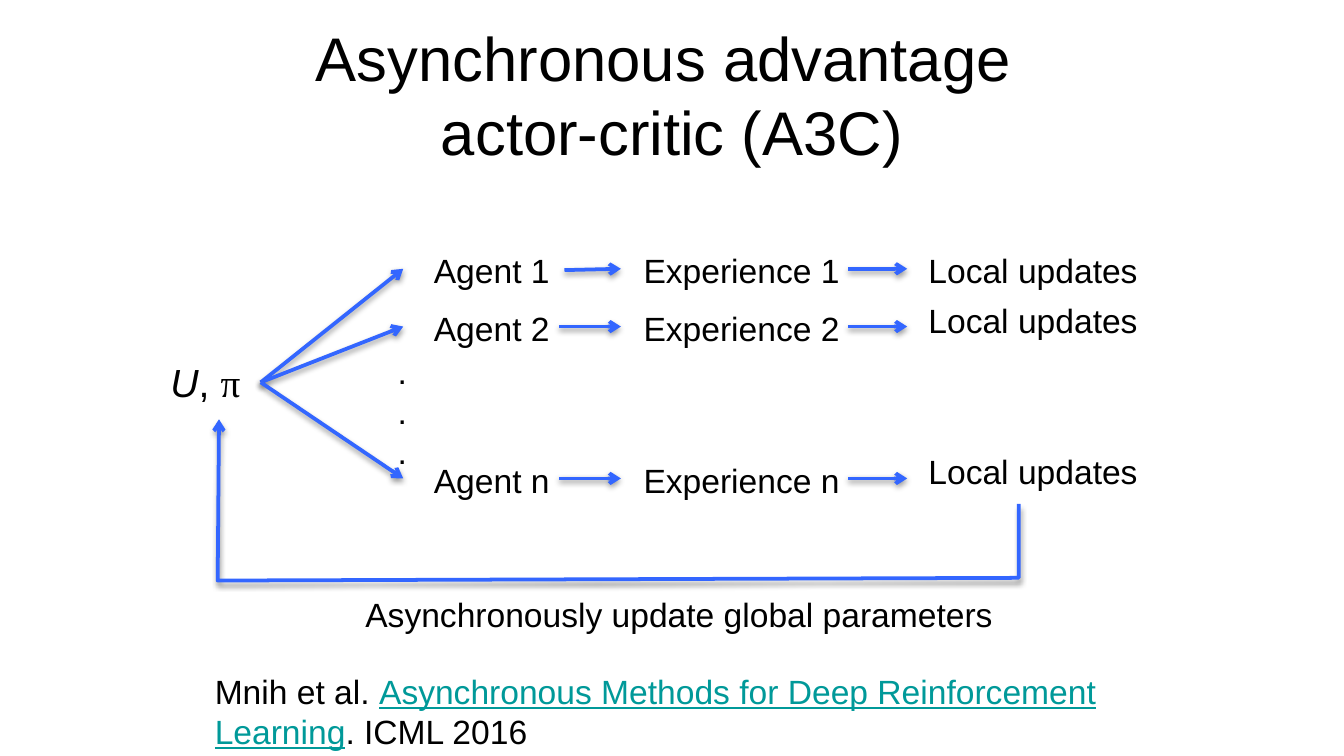
from dataclasses import dataclass

import pptx
import pptx.dml.color
import pptx.enum.shapes
import pptx.enum.text
import pptx.oxml
import pptx.oxml.ns
import pptx.util

PX = 9144  # EMU in one px, 100 px to the inch
RIGHT_SIDE = 3


@dataclass(frozen=True)
class Theme:
    font: str = "Arial"
    symbol_font: str = "Times New Roman"
    ink: str = "000000"
    flow: str = "3366FF"
    link: str = "009999"
    title: int = 33
    state: int = 21
    body: int = 18
    stroke: int = 2


@dataclass(frozen=True)
class Box:
    left: int
    top: int
    width: int
    height: int

    def inner(self, x, y, width, height):
        return Box(self.left + x, self.top + y, width, height)

    def point(self, x, y):
        return self.left + x, self.top + y

    def emu(self):
        return [n * PX for n in (self.left, self.top, self.width, self.height)]


THEME = Theme()
EFFECTS = (
    '<a:effectLst %s><a:outerShdw blurRad="40000" dist="20000" dir="5400000" rotWithShape="0">'
    '<a:srgbClr val="000000"><a:alpha val="38000"/></a:srgbClr></a:outerShdw></a:effectLst>'
    % pptx.oxml.ns.nsdecls("a")
)
ARROWHEAD = '<a:tailEnd type="arrow" %s/>' % pptx.oxml.ns.nsdecls("a")


def rgb(value):
    return pptx.dml.color.RGBColor.from_string(value)


def set_font(font, size, name=THEME.font):
    font.name = name
    font.size = pptx.util.Pt(size)
    font.color.rgb = rgb(THEME.ink)


def add_text(slide, box, *lines, size=THEME.body, wrap=False):
    """Place lines of text; each line is a list of run strings."""
    label = slide.shapes.add_textbox(*box.emu())
    frame = label.text_frame
    frame.word_wrap = wrap
    frame.auto_size = pptx.enum.text.MSO_AUTO_SIZE.SHAPE_TO_FIT_TEXT
    for index, runs in enumerate(lines):
        paragraph = frame.add_paragraph() if index else frame.paragraphs[0]
        set_font(paragraph.font, size)
        for words in runs:
            paragraph.add_run().text = words
    return label


def style_flow(flow):
    """Blue stroke, arrowhead at the end and a soft shadow below."""
    flow.line.color.rgb = rgb(THEME.flow)
    flow.line.width = pptx.util.Pt(THEME.stroke)
    properties = flow._element.spPr
    stroke = properties.find(pptx.oxml.ns.qn("a:ln"))
    stroke.append(pptx.oxml.parse_xml(ARROWHEAD))
    stroke.addnext(pptx.oxml.parse_xml(EFFECTS))


def add_arrow(slide, start, end, source=None):
    arrow = slide.shapes.add_connector(
        pptx.enum.shapes.MSO_CONNECTOR.STRAIGHT, *[n * PX for n in (*start, *end)]
    )
    if source is not None:
        arrow.begin_connect(source, RIGHT_SIDE)
    style_flow(arrow)


def add_title(slide, box):
    title = slide.shapes.title
    title.left, title.top, title.width, title.height = box.emu()
    frame = title.text_frame
    frame.text = "Asynchronous advantage \vactor-critic (A3C)"
    frame.auto_size = pptx.enum.text.MSO_AUTO_SIZE.NONE
    frame.vertical_anchor = pptx.enum.text.MSO_ANCHOR.MIDDLE
    heading = frame.paragraphs[0]
    heading.alignment = pptx.enum.text.PP_ALIGN.CENTER
    set_font(heading.font, THEME.title)


def add_state(slide, box):
    """Global value and policy, shared by all agents."""
    state = add_text(slide, box, ["U", ", ", "π"], size=THEME.state, wrap=True)
    value, _, policy = state.text_frame.paragraphs[0].runs
    value.font.italic = True
    policy.font.name = THEME.symbol_font
    return state


def add_workers(slide, box, state, state_exit):
    """One row per agent: agent, experience, local updates."""
    # Name, top of row, top of its updates label
    rows = [("1", 0, 0), ("2", 43, 37), ("n", 156, 150)]
    for name, top, update_top in rows:
        flow_y = top + 19
        add_arrow(slide, state_exit, box.point(14, flow_y), state)
        agent = add_text(slide, box.inner(27, top, 107, 40), [f"Agent {name}"])
        add_text(slide, box.inner(183, top, 167, 40), [f"Experience {name}"])
        add_text(slide, box.inner(395, update_top, 177, 40), ["Local updates"])
        add_arrow(slide, box.point(130, flow_y), box.point(176, flow_y),
                  agent if name == "1" else None)
        add_arrow(slide, box.point(345, flow_y), box.point(389, flow_y))

    # Agents left out between 2 and n
    add_text(slide, box.inner(0, 75, 27, 101), *[["."]] * 3)


def add_feedback(slide, box):
    """Path from the local updates back to the global state."""
    right, bottom = box.width, box.height
    outline = slide.shapes.build_freeform(*box.point(right, 63), scale=PX)
    corners = [(right, bottom - 2), (0, bottom), (1, 0)]
    outline.add_line_segments([box.point(*corner) for corner in corners], close=False)
    feedback = outline.convert_to_shape()
    feedback.fill.background()
    style_flow(feedback)
    add_text(slide, box.inner(100, bottom + 5, 491, 40),
             ["Asynchronously update global parameters"])


def add_citation(slide, box):
    citation = add_text(
        slide, box,
        ["Mnih et al. ", "Asynchronous Methods for Deep Reinforcement Learning", ". ICML 2016"],
        wrap=True,
    )
    paper = citation.text_frame.paragraphs[0].runs[1]
    paper.font.color.rgb = rgb(THEME.link)
    paper.font.underline = True


def main():
    deck = pptx.Presentation()
    # Widescreen, 16:9
    deck.slide_width = 1000 * PX
    deck.slide_height = deck.slide_width * 9 // 16
    slide = deck.slides.add_slide(deck.slide_layouts[5])

    add_title(slide, Box(50, 23, 900, 94))
    add_citation(slide, Box(150, 494, 706, 71))
    state_box = Box(117, 262, 77, 45)
    state = add_state(slide, state_box)
    add_workers(slide, Box(286, 181, 572, 196), state, state_box.point(77, 23))
    add_feedback(slide, Box(162, 312, 596, 120))

    deck.save("out.pptx")


if __name__ == "__main__":
    main()
